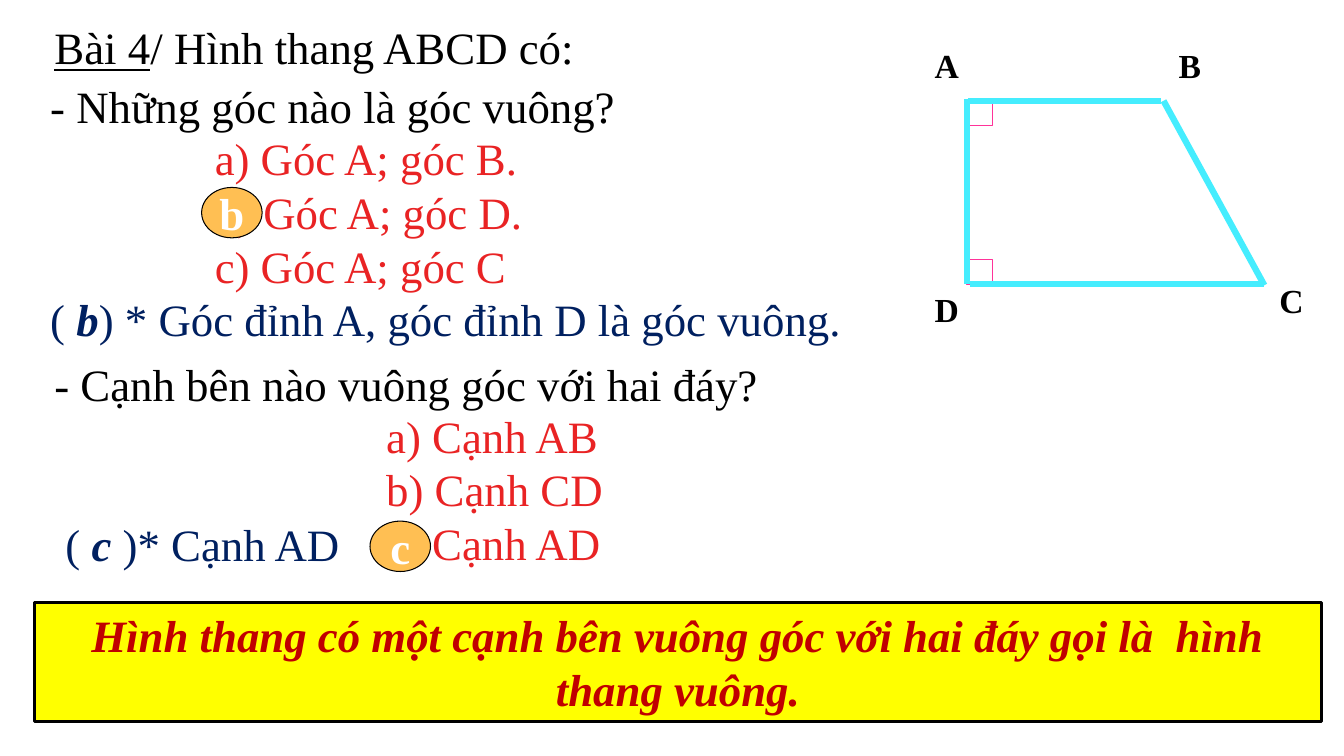
from dataclasses import dataclass

from lxml import etree
from pptx import Presentation
from pptx.dml.color import RGBColor
from pptx.enum.shapes import MSO_CONNECTOR, MSO_SHAPE
from pptx.enum.text import MSO_ANCHOR, MSO_AUTO_SIZE, PP_ALIGN
from pptx.oxml.ns import qn
from pptx.util import Pt

PX = 9144  # EMU in one px, 100 px to the inch


@dataclass(frozen=True)
class Theme:
    face: str = "Times New Roman"
    body_size: int = 32
    label_size: int = 24
    black: str = "000000"
    white: str = "FFFFFF"
    option: str = "E92324"
    answer: str = "002060"
    rule_text: str = "C00000"
    rule_fill: str = "FFFF00"
    badge: str = "FFBF53"
    side: str = "45EDFE"
    angle: str = "FF3399"


class Lesson:
    def __init__(self, slide, theme):
        self.slide = slide
        self.theme = theme

    def fill_frame(self, frame, paragraphs, color, size=None, align=PP_ALIGN.LEFT,
                   anchor=MSO_ANCHOR.TOP, wrap=True):
        """Fill a frame; each paragraph is a list of (text, font values)."""
        frame_format = {"word_wrap": wrap, "vertical_anchor": anchor,
                        "auto_size": MSO_AUTO_SIZE.NONE}
        for key, value in frame_format.items():
            setattr(frame, key, value)
        for index, pieces in enumerate(paragraphs):
            line = frame.add_paragraph() if index else frame.paragraphs[0]
            line.alignment = align
            line.space_before = Pt(0)
            for text, extra in pieces:
                run = line.add_run()
                run.text = text
                font_format = {"name": self.theme.face,
                               "size": Pt(size or self.theme.body_size), **extra}
                for key, value in font_format.items():
                    setattr(run.font, key, value)
                run.font.color.rgb = RGBColor.from_string(color)

    def fill_placeholder(self, holder, box, paragraphs, color):
        for key, value in zip(("left", "top", "width", "height"), box):
            setattr(holder, key, value * PX)
        self.fill_frame(holder.text_frame, paragraphs, color)
        for line in holder.text_frame.paragraphs:
            properties = line._p.get_or_add_pPr()
            properties.set("marL", "0")
            properties.set("indent", "0")
            etree.SubElement(properties, qn("a:buNone"))

    def text(self, box, pieces, color, **style):
        holder = self.slide.shapes.add_textbox(*(v * PX for v in box))
        self.fill_frame(holder.text_frame, [pieces], color, **style)

    def shape(self, kind, box, fill, line, weight=0.75):
        shape = self.slide.shapes.add_shape(kind, *(v * PX for v in box))
        shape.shadow.inherit = False
        shape.fill.solid()
        shape.fill.fore_color.rgb = RGBColor.from_string(fill)
        shape.line.color.rgb = RGBColor.from_string(line)
        shape.line.width = Pt(weight)
        return shape

    def side(self, start, end):
        side = self.slide.shapes.add_connector(
            MSO_CONNECTOR.STRAIGHT, *(v * PX for v in start + end))
        side.line.color.rgb = RGBColor.from_string(self.theme.side)
        side.line.width = Pt(4.5)
        etree.SubElement(side._element.spPr, qn("a:effectLst"))

    def badge(self, letter, left, top):
        """Circle the letter of the right answer."""
        badge = self.shape(MSO_SHAPE.OVAL, (left, top, 60, 50),
                           self.theme.badge, self.theme.black)
        self.fill_frame(badge.text_frame, [[(letter, {"bold": True})]],
                        self.theme.white, align=PP_ALIGN.CENTER,
                        anchor=MSO_ANCHOR.MIDDLE, wrap=False)


def main():
    theme = Theme()
    deck = Presentation()
    deck.slide_width, deck.slide_height = 1333 * PX, 750 * PX
    slide = deck.slides.add_slide(deck.slide_layouts.get_by_name("Two Content"))
    lesson = Lesson(slide, theme)
    strong = {"bold": True, "italic": True}

    title, angle_options, side_options = slide.placeholders
    lesson.fill_placeholder(
        title, (44, 15, 568, 64),
        [[("Bài 4", {"underline": True}), ("/ Hình thang ABCD có:", {})]],
        theme.black)
    options = [
        (angle_options, (203, 125, 328, 172),
         ("a) Góc A; góc B.", "b) Góc A; góc D.", "c) Góc A; góc C")),
        (side_options, (373, 400, 258, 172),
         ("a) Cạnh AB", "b) Cạnh CD", "c) Cạnh AD")),
    ]
    for holder, box, choices in options:
        lesson.fill_placeholder(holder, box, [[(c, {})] for c in choices],
                                theme.option)

    lesson.text((40, 73, 633, 64), [("- Những góc nào là góc vuông?", {})],
                theme.black)
    lesson.text((44, 349, 809, 64),
                [("- Cạnh bên nào vuông góc với hai đáy?", {})], theme.black)
    lesson.text((40, 284, 823, 64),
                [("( ", {}), ("b", strong),
                 (") * Góc đỉnh A, góc đỉnh D là góc vuông.", {})], theme.answer)
    lesson.text((55, 508, 295, 64),
                [("( ", {}), ("c", strong), (" )* Cạnh AD", {})], theme.answer)

    rule = lesson.shape(MSO_SHAPE.RECTANGLE, (34, 598, 1277, 118),
                        theme.rule_fill, theme.black, 2.25)
    lesson.fill_frame(rule.text_frame, [[(
        "Hình thang có một cạnh bên vuông góc với hai đáy gọi là  hình thang vuông.",
        strong)]], theme.rule_text, align=PP_ALIGN.CENTER)

    for top in (100, 257):
        lesson.shape(MSO_SHAPE.RECTANGLE, (959, top, 25, 25),
                     theme.white, theme.angle)
    for start, end in (((962, 282), (1254, 282)), ((960, 100), (1152, 100)),
                       ((1154, 100), (1254, 283)), ((959, 98), (959, 282))):
        lesson.side(start, end)
    for vertex, left, top in (("A", 917, 40), ("B", 1159, 40),
                              ("C", 1259, 273), ("D", 917, 282)):
        lesson.text((left, top, 55, 50), [(vertex, {"bold": True})],
                    theme.black, size=theme.label_size)

    lesson.badge("b", 200, 186)
    lesson.badge("c", 367, 517)
    deck.save("out.pptx")


if __name__ == "__main__":
    main()
